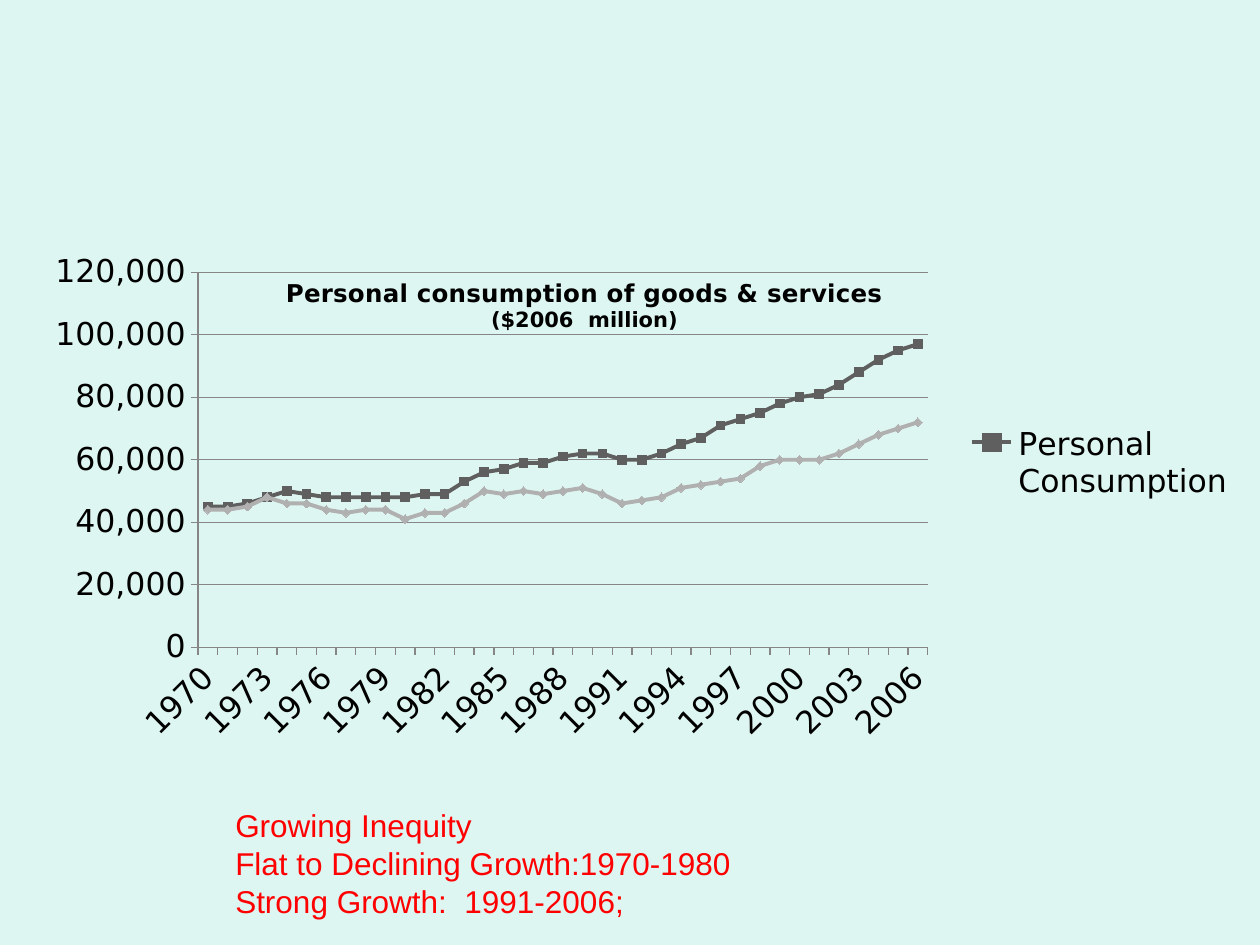
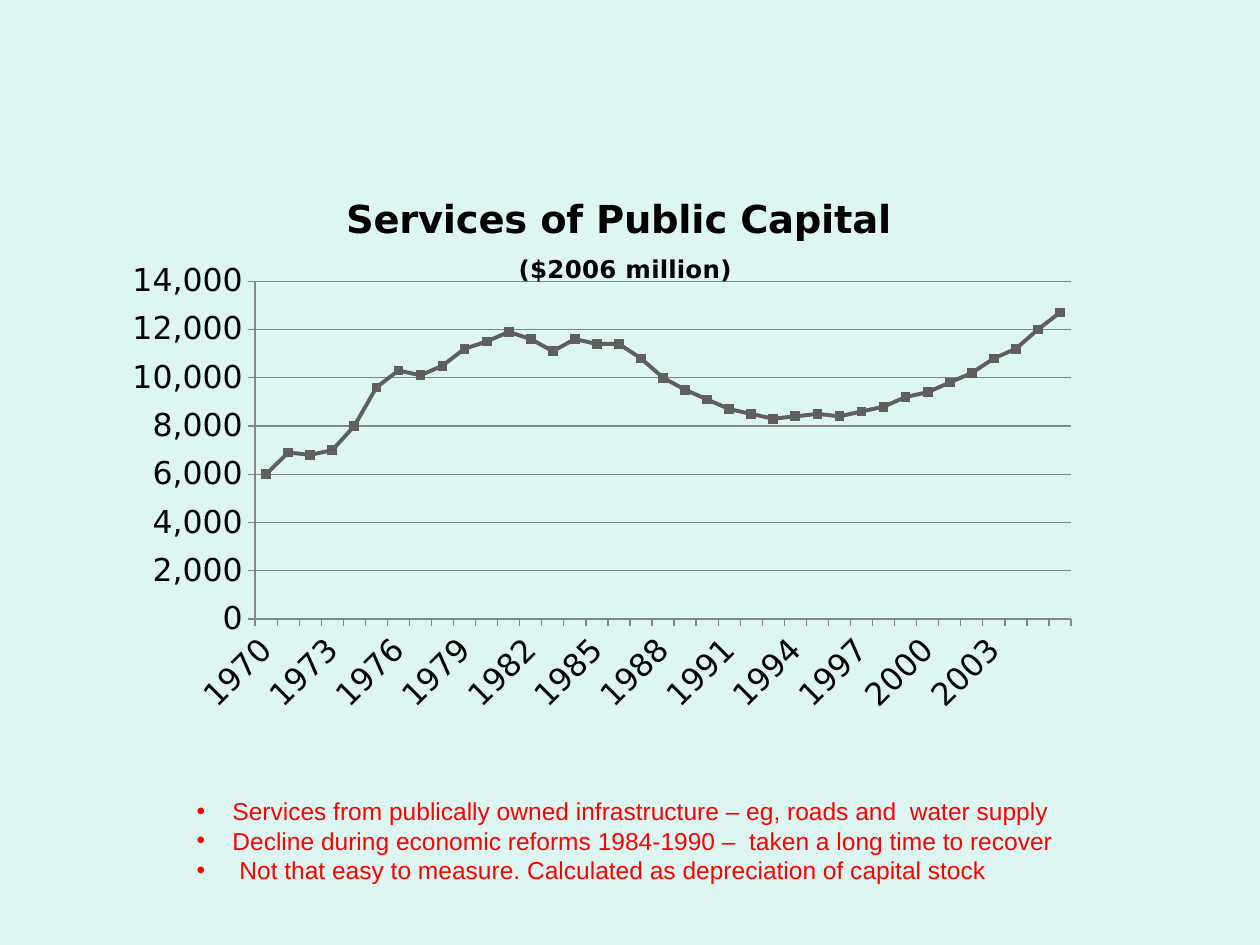
from lxml.etree import SubElement
from pptx import Presentation
from pptx.chart.data import CategoryChartData
from pptx.dml.color import RGBColor
from pptx.enum.chart import (XL_CHART_TYPE, XL_LEGEND_POSITION,
                             XL_MARKER_STYLE, XL_TICK_MARK)
from pptx.enum.text import MSO_ANCHOR, MSO_AUTO_SIZE, PP_ALIGN
from pptx.oxml import parse_xml
from pptx.oxml.ns import nsdecls, qn
from pptx.util import Pt

# Shared style
BACKGROUND = "DEF6F1"
TEXT = "000000"
NOTE = "FF0000"
GRID = "868686"
DARK_SERIES = "5F5F5F"
LIGHT_SERIES = "B0B0B0"
CHART_FONT = "DejaVu Sans"
NOTE_FONT = "Arial"

# Chart data, in $2006 million
CONSUMPTION = [1000 * value for value in (
    45, 45, 46, 48, 50, 49, 48, 48, 48, 48, 48, 49, 49, 53, 56, 57, 59, 59, 61,
    62, 62, 60, 60, 62, 65, 67, 71, 73, 75, 78, 80, 81, 84, 88, 92, 95, 97)]
LOWER_CONSUMPTION = [1000 * value for value in (
    44, 44, 45, 48, 46, 46, 44, 43, 44, 44, 41, 43, 43, 46, 50, 49, 50, 49, 50,
    51, 49, 46, 47, 48, 51, 52, 53, 54, 58, 60, 60, 60, 62, 65, 68, 70, 72)]
PUBLIC_CAPITAL = [100 * value for value in (
    60, 69, 68, 70, 80, 96, 103, 101, 105, 112, 115, 119, 116, 111, 116, 114,
    114, 108, 100, 95, 91, 87, 85, 83, 84, 85, 84, 86, 88, 92, 94, 98, 102,
    108, 112, 120, 127)]


def color(hex_string):
    return RGBColor.from_string(hex_string)


def set_layout(parent, index, inner=False, **fractions):
    """Place a chart part by fractions of the chart's size."""
    for old_layout in parent.findall(qn("c:layout")):
        parent.remove(old_layout)
    layout = parse_xml(f"<c:layout {nsdecls('c')}><c:manualLayout/></c:layout>")
    manual = layout[0]
    if inner:
        SubElement(manual, qn("c:layoutTarget")).set("val", "inner")
    for key in ("x", "y"):
        SubElement(manual, qn(f"c:{key}Mode")).set("val", "edge")
    for key, value in fractions.items():
        SubElement(manual, qn(f"c:{key}")).set("val", str(value))
    parent.insert(index, layout)


def add_run(paragraph, text, size, font_name, hex_color, bold=False):
    run = paragraph.add_run()
    run.text = text
    run.font.size = Pt(size)
    run.font.name = font_name
    run.font.bold = bold
    run.font.color.rgb = color(hex_color)


def add_line_chart(slide, chart_type, box, years, series_styles, plot_box):
    data = CategoryChartData(number_format="#,##0")
    data.categories = [str(year) for year in years]
    for name, values, _, _ in series_styles:
        data.add_series(name, values)
    chart = slide.shapes.add_chart(
        chart_type, *[Pt(length) for length in box], data).chart
    chart.has_legend = False
    chart.has_title = False
    chart.font.size = Pt(18)
    chart.font.name = CHART_FONT
    chart.font.color.rgb = color(TEXT)
    x, y, width, height = plot_box
    plot_area = chart.plots[0]._element.getparent()
    set_layout(plot_area, 0, inner=True, x=x, y=y, w=width, h=height)

    # Series
    chart.plots[0].vary_by_categories = False
    for series, (_, _, hex_color, marker) in zip(chart.plots[0].series, series_styles):
        series.smooth = False
        series.format.line.width = Pt(2.25)
        series.format.line.color.rgb = color(hex_color)
        series.marker.style = marker
        series.marker.size = 5
        series.marker.format.fill.solid()
        series.marker.format.fill.fore_color.rgb = color(hex_color)
        series.marker.format.line.color.rgb = color(hex_color)
    return chart


def style_axes(chart, maximum, unit):
    for axis in (chart.category_axis, chart.value_axis):
        axis.major_tick_mark = XL_TICK_MARK.OUTSIDE
        axis.minor_tick_mark = XL_TICK_MARK.NONE
        axis.format.line.color.rgb = color(GRID)
        axis.tick_labels.font.size = Pt(18)
    values = chart.value_axis
    values.minimum_scale, values.maximum_scale = 0, maximum
    values.major_unit = unit
    values.has_major_gridlines = True
    values.major_gridlines.format.line.color.rgb = color(GRID)
    values.tick_labels.number_format = "#,##0"
    values.tick_labels.number_format_is_linked = False

    # Slanted year labels, every third year
    years = chart.category_axis._element
    years.find(qn("c:txPr")).find(qn("a:bodyPr")).set("rot", "-2700000")
    skip = parse_xml(f'<c:tickLblSkip {nsdecls("c")} val="3"/>')
    years.find(qn("c:noMultiLvlLbl")).addprevious(skip)


def add_chart_title(chart, lines, x, y):
    """Each line is a list of (text, size) runs."""
    chart.has_title = True
    title = chart.chart_title
    frame = title.text_frame
    for number, runs in enumerate(lines):
        paragraph = frame.add_paragraph() if number else frame.paragraphs[0]
        paragraph.alignment = PP_ALIGN.CENTER
        for text, size in runs:
            add_run(paragraph, text, size, CHART_FONT, TEXT, bold=True)
    set_layout(title._element, 1, x=x, y=y)
    title._element.find(qn("c:overlay")).set("val", "1")


def add_legend(chart, unnamed_series):
    """Show a legend with entries for the named series only."""
    chart.has_legend = True
    legend = chart.legend
    legend.position = XL_LEGEND_POSITION.RIGHT
    legend.include_in_layout = False
    legend.font.size = Pt(18)
    set_layout(legend._element, 1, x=0.755, y=0.35, w=0.23, h=0.15)
    legend._element.insert(1, parse_xml(
        f'<c:legendEntry {nsdecls("c")}><c:idx val="{unnamed_series}"/>'
        '<c:delete val="1"/></c:legendEntry>'))


def fill_note(shape, box, lines, size, indents=None):
    """Write red note lines; indents turn them into bullets."""
    shape.left, shape.top, shape.width, shape.height = [Pt(length) for length in box]
    frame = shape.text_frame
    frame.word_wrap = True
    frame.auto_size = MSO_AUTO_SIZE.SHAPE_TO_FIT_TEXT
    frame.vertical_anchor = MSO_ANCHOR.TOP
    for number, text in enumerate(lines):
        paragraph = frame.add_paragraph() if number else frame.paragraphs[0]
        paragraph.alignment = PP_ALIGN.LEFT
        paragraph.line_spacing = 1.0
        paragraph.space_before = Pt(0)
        add_run(paragraph, text, size, NOTE_FONT, NOTE)
        if indents:
            properties = paragraph._p.get_or_add_pPr()
            properties.set("marL", str(Pt(indents[number])))
            properties.set("indent", str(-Pt(indents[number])))
            SubElement(properties, qn("a:buFont")).set("typeface", NOTE_FONT)
            SubElement(properties, qn("a:buChar")).set("char", "•")


def build_consumption_slide(presentation):
    slide = presentation.slides.add_slide(presentation.slide_layouts[6])
    chart = add_line_chart(
        slide, XL_CHART_TYPE.LINE_MARKERS, (14.4, 139.7, 705.6, 294.5),
        range(1970, 2007),
        [("Personal Consumption", CONSUMPTION, DARK_SERIES, XL_MARKER_STYLE.SQUARE),
         ("", LOWER_CONSUMPTION, LIGHT_SERIES, XL_MARKER_STYLE.DIAMOND)],
        (0.14, 0.054, 0.591, 0.728))
    style_axes(chart, 120000, 20000)
    add_chart_title(chart, [[("Personal consumption of goods & services", 14)],
                            [("($2006  million)", 12)]], 0.208, 0.055)
    add_legend(chart, unnamed_series=1)
    note_box = (127.4, 457.2, 360, 72.7)
    note = slide.shapes.add_textbox(*[Pt(length) for length in note_box])
    fill_note(note, note_box,
              ["Growing Inequity", "Flat to Declining Growth:1970-1980",
               "Strong Growth:  1991-2006;"], 18)


def build_public_capital_slide(presentation):
    slide = presentation.slides.add_slide(presentation.slide_layouts[1])
    title = slide.shapes.title
    title._element.getparent().remove(title._element)
    chart = add_line_chart(
        slide, XL_CHART_TYPE.LINE_MARKERS_STACKED, (54, 100.1, 566.6, 317.5),
        range(1970, 2006),
        [("", PUBLIC_CAPITAL, DARK_SERIES, XL_MARKER_STYLE.SQUARE)],
        (0.162, 0.191, 0.823, 0.608))
    style_axes(chart, 14000, 2000)
    add_chart_title(chart, [[("Services of Public Capital", 22)],
                            [(" ", 22), ("($2006 million)", 14)]], 0.25, 0.03)
    fill_note(slide.placeholders[1], (105.1, 451.4, 532.8, 58.3),
              ["Services from publically owned infrastructure – eg, roads and  water supply",
               "Decline during economic reforms 1984-1990 –  taken a long time to recover",
               "Not that easy to measure. Calculated as depreciation of capital stock"],
              14, indents=(20.5, 20.5, 24.5))


def main():
    presentation = Presentation()
    presentation.slide_width, presentation.slide_height = Pt(720), Pt(540)
    background = presentation.slide_master.background.fill
    background.solid()
    background.fore_color.rgb = color(BACKGROUND)
    build_consumption_slide(presentation)
    build_public_capital_slide(presentation)
    presentation.save("out.pptx")


if __name__ == "__main__":
    main()
